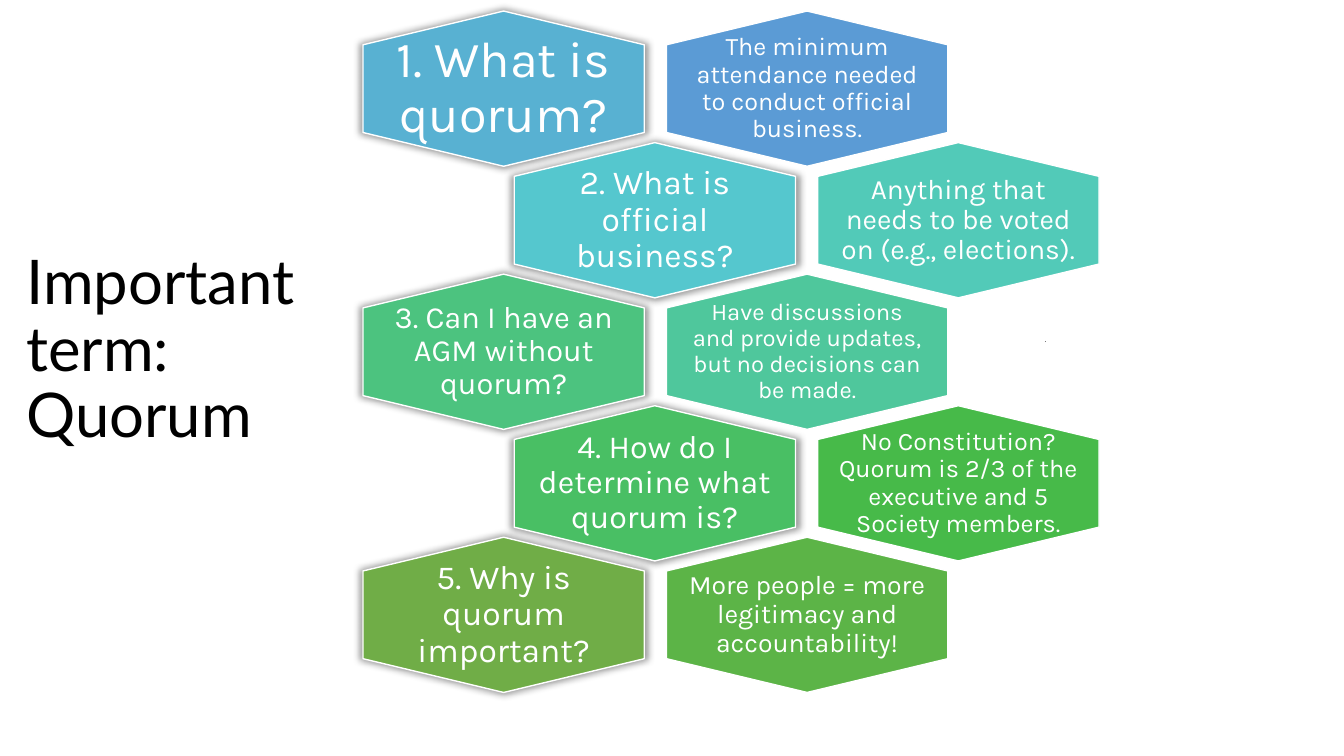
from dataclasses import dataclass

from lxml import etree
from pptx import Presentation
from pptx import util as u
from pptx.dml.color import RGBColor
from pptx.enum import text
from pptx.oxml import ns


@dataclass(frozen=True)
class Theme:
    title_font: str = "Lato"
    hexagon_font: str = "Karla"
    mark_font: str = "Calibri"
    ink: str = "000000"
    paper: str = "FFFFFF"
    title_size: int = 44
    mark_size: int = 5
    line_spacing: float = 0.9
    border: float = 1


class QuorumSlide:
    HEX_WIDTH, HEX_HEIGHT, SHOULDER = 2.79, 1.54, 0.335

    def __init__(self, deck, theme):
        self.theme = theme
        self.slide = deck.slides.add_slide(deck.slide_layouts[5])

    def set_words(self, frame, words, font, size, color, align):
        frame.word_wrap = True
        frame.auto_size = text.MSO_AUTO_SIZE.NONE
        frame.vertical_anchor = text.MSO_ANCHOR.MIDDLE
        frame.text = words
        paragraph = frame.paragraphs[0]
        paragraph.alignment = align
        paragraph.line_spacing = self.theme.line_spacing
        run_font = paragraph.runs[0].font
        run_font.name, run_font.size = font, u.Pt(size)
        run_font.color.rgb = RGBColor.from_string(color)

    def set_insets(self, frame, across, down):
        frame.margin_left = frame.margin_right = u.Inches(across)
        frame.margin_top = frame.margin_bottom = u.Inches(down)

    def place(self, shape, left, top, width, height):
        shape.left, shape.top = u.Inches(left), u.Inches(top)
        shape.width, shape.height = u.Inches(width), u.Inches(height)

    def title(self, words, *box):
        heading = self.slide.shapes.title
        self.place(heading, *box)
        self.set_words(heading.text_frame, words, self.theme.title_font,
                       self.theme.title_size, self.theme.ink, text.PP_ALIGN.LEFT)

    def hexagon(self, left, top, words, size, fill, insets, shaded):
        middle, right = left + self.HEX_WIDTH / 2, left + self.HEX_WIDTH
        bottom = top + self.HEX_HEIGHT
        upper, lower = top + self.SHOULDER, bottom - self.SHOULDER
        corners = [(middle, top), (right, upper), (right, lower),
                   (middle, bottom), (left, lower), (left, upper)]
        start, *rest = [(u.Inches(x), u.Inches(y)) for x, y in corners]
        outline = self.slide.shapes.build_freeform(*start)
        outline.add_line_segments(rest, close=True)
        cell = outline.convert_to_shape()
        cell.fill.solid()
        cell.fill.fore_color.rgb = RGBColor.from_string(fill)
        cell.line.color.rgb = RGBColor.from_string(self.theme.paper)
        cell.line.width = u.Pt(self.theme.border)
        cell.shadow.inherit = False
        if shaded:
            self.shade(cell)
        self.set_insets(cell.text_frame, *insets)
        self.set_words(cell.text_frame, words, self.theme.hexagon_font, size,
                       self.theme.paper, text.PP_ALIGN.CENTER)

    def shade(self, shape):
        effects = shape.element.spPr.find(ns.qn("a:effectLst"))
        shadow = etree.SubElement(
            effects, ns.qn("a:outerShdw"), blurRad=str(u.Pt(5)),
            sx="102000", sy="102000", algn="ctr", rotWithShape="0")
        color = etree.SubElement(shadow, ns.qn("a:srgbClr"), val=self.theme.ink)
        etree.SubElement(color, ns.qn("a:alpha"), val="40000")

    def mark(self, words, *box):
        dot = self.slide.shapes.add_textbox(0, 0, 0, 0)
        self.place(dot, *box)
        self.set_insets(dot.text_frame, 0.02, 0.02)
        self.set_words(dot.text_frame, words, self.theme.mark_font,
                       self.theme.mark_size, self.theme.ink, text.PP_ALIGN.LEFT)


# Each row: question, then answer, as (words, size, fill)
ROWS = [
    (("1. What is quorum?", 36, "58B1D2"),
     ("The minimum attendance needed to conduct official business.", 18, "5B9BD5")),
    (("2. What is official business?", 24, "55C7CE"),
     ("Anything that needs to be voted on (e.g., elections).", 20, "52CAB8")),
    (("3. Can I have an AGM without quorum?", 22, "4CC37F"),
     ("Have discussions and provide updates, but no decisions can be made.", 17, "4FC79C")),
    (("4. How do I determine what quorum is?", 23, "49BF64"),
     ("No Constitution? Quorum is 2/3 of the executive and 5 Society members.", 18, "47BA49")),
    (("5. Why is quorum important?", 24, "70AD47"),
     ("More people = more legitimacy and accountability!", 19, "5CB447")),
]
ROW_LEFTS = (3.6, 5.1)
FIRST_TOP, ROW_PITCH = 0.11, 1.305
ANSWER_OFFSET = 3.01
WIDE_INSETS, NARROW_INSETS = (0.22, 0.24), (0.18, 0.2)


def main():
    deck = Presentation()
    deck.slide_width, deck.slide_height = u.Inches(13.33), u.Inches(7.5)
    page = QuorumSlide(deck, Theme())

    # Title
    page.title("Important term: Quorum", 0.16, 1.77, 3.21, 3.43)

    # Honeycomb: alternate rows shift right and swap the drawing order
    for index, (question, answer) in enumerate(ROWS):
        shifted = index % 2
        left, top = ROW_LEFTS[shifted], FIRST_TOP + index * ROW_PITCH
        pair = [(left, question, True), (left + ANSWER_OFFSET, answer, False)]
        if not shifted:
            pair.reverse()
        for (x, content, shaded), insets in zip(pair, (WIDE_INSETS, NARROW_INSETS)):
            page.hexagon(x, top, *content, insets, shaded)

    # Small mark beside the third row
    page.mark(".", 10.34, 2.92, 2.9, 0.92)

    deck.save("out.pptx")


if __name__ == "__main__":
    main()
